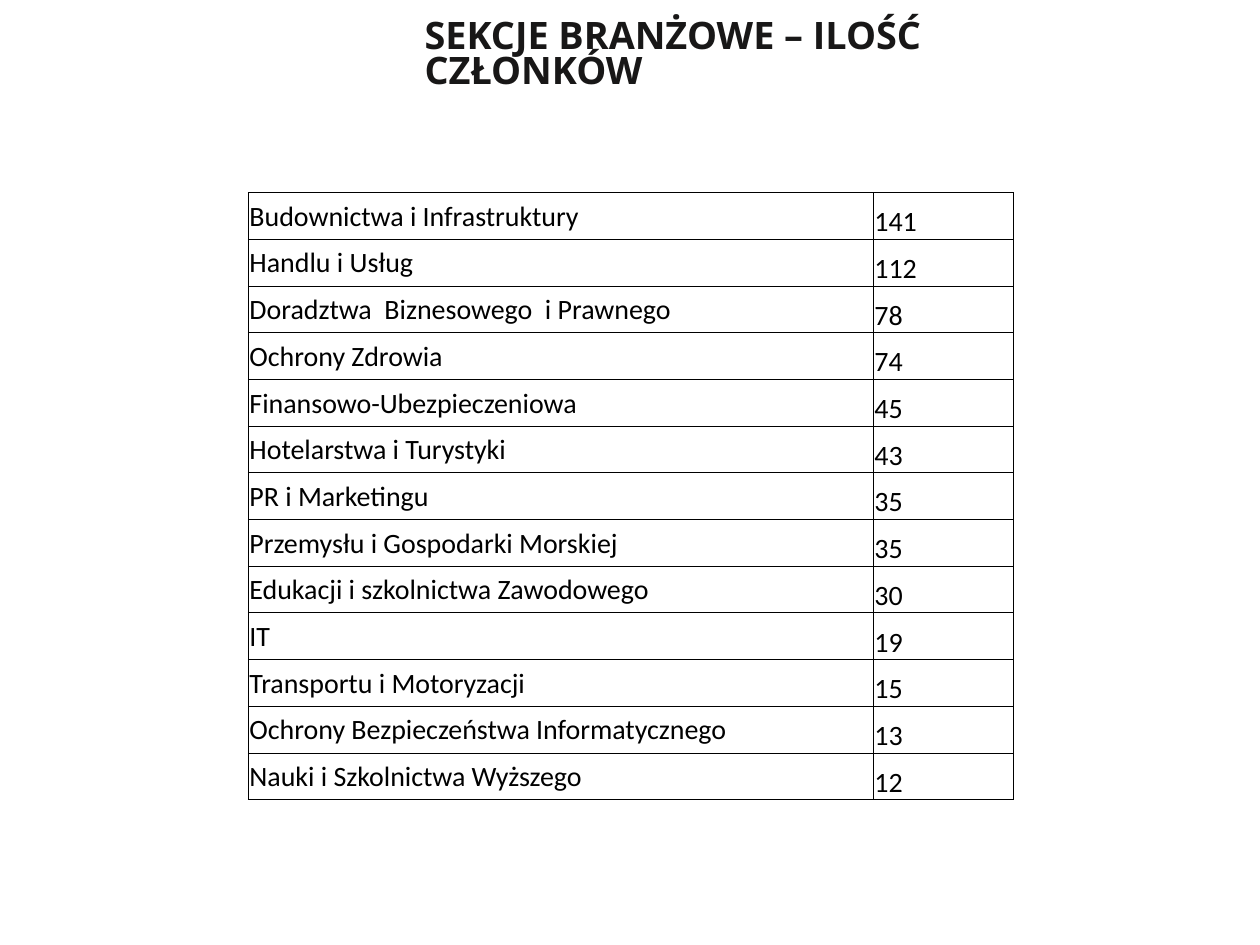
from lxml.etree import SubElement
from pptx import Presentation
from pptx.dml.color import RGBColor
from pptx.enum.text import MSO_ANCHOR, MSO_AUTO_SIZE, PP_ALIGN
from pptx.oxml.ns import qn
from pptx.util import Inches, Pt

INK = RGBColor(0x18, 0x17, 0x17)
BLACK = RGBColor(0, 0, 0)

SECTIONS = [
    ("Budownictwa i Infrastruktury", 141),
    ("Handlu i Usług", 112),
    ("Doradztwa  Biznesowego  i Prawnego", 78),
    ("Ochrony Zdrowia", 74),
    ("Finansowo-Ubezpieczeniowa", 45),
    ("Hotelarstwa i Turystyki", 43),
    ("PR i Marketingu", 35),
    ("Przemysłu i Gospodarki Morskiej", 35),
    ("Edukacji i szkolnictwa Zawodowego", 30),
    ("IT", 19),
    ("Transportu i Motoryzacji", 15),
    ("Ochrony Bezpieczeństwa Informatycznego", 13),
    ("Nauki i Szkolnictwa Wyższego", 12),
]


class SlideBuilder:
    """Holds the style and the current slide."""

    title_font, title_size = "Open Sans", Pt(21.6)
    table_font, table_size = "Calibri", Pt(16)
    border_width = Pt(0.5)

    def __init__(self, prs):
        self.s = prs.slides.add_slide(prs.slide_layouts[5])

    def format(self, p, name, size, color, bold=False):
        p.alignment = PP_ALIGN.LEFT
        p.font.name, p.font.size, p.font.bold = name, size, bold
        p.font.color.rgb = color

    def title(self, text, left, top, width, height):
        sp = self.s.shapes.title
        sp.left, sp.top, sp.width, sp.height = left, top, width, height
        tf = sp.text_frame
        tf.text = text
        tf.word_wrap = True
        tf.auto_size = MSO_AUTO_SIZE.NONE
        tf.vertical_anchor = MSO_ANCHOR.MIDDLE
        p = tf.paragraphs[0]
        p.line_spacing = 0.78
        self.format(p, self.title_font, self.title_size, INK, bold=True)

    def borders(self, cell):
        tcPr = cell._tc.get_or_add_tcPr()
        for i, side in enumerate(("lnL", "lnR", "lnT", "lnB")):
            ln = SubElement(tcPr, qn(f"a:{side}"), w=str(self.border_width))
            tcPr.insert(i, ln)  # borders come before the cell fill
            fill = SubElement(ln, qn("a:solidFill"))
            SubElement(fill, qn("a:srgbClr"), val=str(BLACK))

    def cell(self, cell, text, anchor):
        cell.text = text
        cell.vertical_anchor = anchor
        cell.margin_left = cell.margin_right = cell.margin_top = Inches(0.01)
        cell.margin_bottom = 0
        cell.fill.background()
        self.borders(cell)
        self.format(cell.text_frame.paragraphs[0], self.table_font,
                    self.table_size, BLACK)

    def table(self, rows, left, top, col_widths, height):
        table = self.s.shapes.add_table(
            len(rows), len(col_widths), left, top, sum(col_widths), height).table
        table.first_row = table.horz_banding = False
        for column, width in zip(table.columns, col_widths):
            column.width = width
        for r, (name, members) in enumerate(rows):
            self.cell(table.cell(r, 0), name, MSO_ANCHOR.MIDDLE)
            self.cell(table.cell(r, 1), str(members), MSO_ANCHOR.BOTTOM)


def main():
    prs = Presentation()
    prs.slide_width, prs.slide_height = Inches(10), Inches(7.5)
    builder = SlideBuilder(prs)

    # Heading
    builder.title("SEKCJE BRANŻOWE – ILOŚĆ CZŁONKÓW",
                  Inches(3.27), Inches(0.23), Inches(5.59), Inches(0.44))

    # Members per section
    builder.table(SECTIONS, Inches(1.97), Inches(1.53),
                  (Inches(4.96), Inches(1.11)), Inches(4.82))

    prs.save("out.pptx")


if __name__ == "__main__":
    main()
